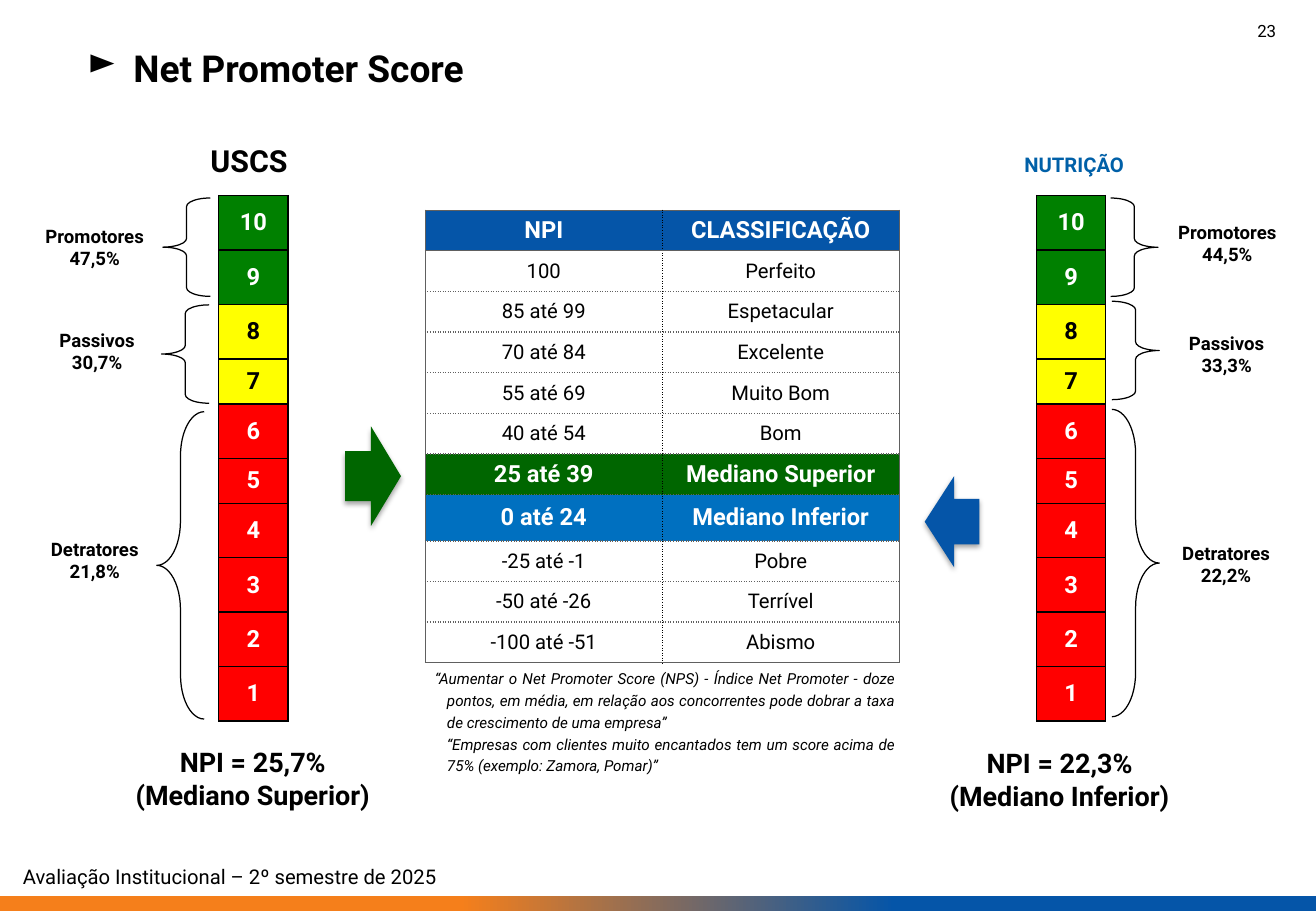
"""Builds the Net Promoter Score slide comparing USCS with the Nutrição course."""
import pptx
import pptx.dml.color
import pptx.enum.dml
import pptx.enum.shapes
import pptx.enum.text
import pptx.oxml
import pptx.oxml.ns
import pptx.util
from pptx.util import Inches

COLORS = {
    "black": "000000", "white": "FFFFFF", "gray": "606060", "orange": "F57F1B",
    "navy": "0555A8", "title_blue": "0060A8", "row_blue": "0070C0",
    "dark_green": "006600", "green": "008000", "yellow": "FFFF00", "red": "FF0000",
}
RGB = {name: pptx.dml.color.RGBColor.from_string(code) for name, code in COLORS.items()}
ALIGN = pptx.enum.text.PP_ALIGN
ANCHOR = pptx.enum.text.MSO_ANCHOR
SHAPE = pptx.enum.shapes.MSO_SHAPE
NAMESPACE = pptx.oxml.ns.nsdecls("a")


def write(frame, lines, size, color="black", bold=True, align=ALIGN.CENTER, italic=False):
    frame.word_wrap = True
    for index, line in enumerate(lines):
        paragraph = frame.paragraphs[0] if index == 0 else frame.add_paragraph()
        paragraph.alignment = align
        run = paragraph.add_run()
        run.text = line
        run.font.name = "Roboto"
        run.font.size = pptx.util.Pt(size)
        run.font.bold = bold
        run.font.italic = italic
        run.font.color.rgb = RGB[color]


def style_cell(cell, text, size, color, bold, fill, borders):
    cell.vertical_anchor = ANCHOR.MIDDLE
    write(cell.text_frame, [text], size, color, bold)
    cell.fill.solid()
    cell.fill.fore_color.rgb = RGB[fill]
    properties = cell._tc.get_or_add_tcPr()
    for index, (side, (line_color, width, dash)) in enumerate(zip("LRTB", borders)):
        properties.insert(index, pptx.oxml.parse_xml(
            f'<a:ln{side} {NAMESPACE} w="{pptx.util.Pt(width)}"><a:solidFill>'
            f'<a:srgbClr val="{COLORS[line_color]}"/></a:solidFill>'
            f'<a:prstDash val="{dash}"/></a:ln{side}>'))


presentation = pptx.Presentation()
presentation.slide_width = Inches(10.83)
presentation.slide_height = Inches(7.5)
slide = presentation.slides.add_slide(presentation.slide_layouts[6])
shapes = slide.shapes

footer_bar = shapes.add_shape(SHAPE.RECTANGLE, 0, Inches(7.38), Inches(10.83), Inches(0.12))
footer_bar.shadow.inherit = False
footer_bar.line.fill.background()
footer_bar.fill.gradient()
footer_bar.fill.gradient_angle = 0
for stop, color, position in zip(footer_bar.fill.gradient_stops, ("orange", "navy"), (0.35, 0.68)):
    stop.color.rgb = RGB[color]
    stop.position = position

labels = [
    ((0.09, 7.07, 10.65, 0.3), ["Avaliação Institucional – 2º semestre de 2025"],
     12, "black", False, ALIGN.LEFT, ANCHOR.TOP),
    ((8.31, 0.12, 2.29, 0.4), ["23"], 10, "black", False, ALIGN.RIGHT, ANCHOR.TOP),
    ((0.28, 0.3, 4.04, 0.51), ["Net Promoter Score"], 22, "black", True, ALIGN.LEFT, ANCHOR.MIDDLE),
    ((0.6, 1.12, 2.9, 0.4), ["USCS"], 18, "black", True, ALIGN.CENTER, ANCHOR.TOP),
    ((7.63, 1.1, 2.42, 0.51), ["NUTRIÇÃO"], 12, "title_blue", True, ALIGN.CENTER, ANCHOR.MIDDLE),
]
for box, lines, size in [
    ((0.18, 1.8, 1.2, 0.49), ["Promotores", "47,5%"], 11),
    ((0.15, 2.66, 1.3, 0.47), ["Passivos", "30,7%"], 11),
    ((0.14, 4.38, 1.28, 0.47), ["Detratores", "21,8%"], 11),
    ((0.79, 6.09, 2.58, 0.64), ["NPI = 25,7%", "(Mediano Superior)"], 16),
    ((9.54, 1.77, 1.12, 0.47), ["Promotores", "44,5%"], 11),
    ((9.45, 2.68, 1.29, 0.47), ["Passivos", "33,3%"], 11),
    ((9.45, 4.41, 1.28, 0.49), ["Detratores", "22,2%"], 11),
    ((7.1, 6.1, 3.24, 0.64), ["NPI = 22,3%", "(Mediano Inferior)"], 16),
]:
    labels.append((box, lines, size, "black", True, ALIGN.CENTER, ANCHOR.TOP))

for box, lines, size, color, bold, align, anchor in labels:
    frame = shapes.add_textbox(*map(Inches, box)).text_frame
    frame.vertical_anchor = anchor
    write(frame, lines, size, color, bold, align)
    if lines == ["Net Promoter Score"]:
        bullet = frame.paragraphs[0]._p.get_or_add_pPr()
        bullet.set("marL", str(Inches(0.72)))
        bullet.set("indent", str(Inches(-0.38)))
        bullet.append(pptx.oxml.parse_xml(
            f'<a:buClr {NAMESPACE}><a:srgbClr val="{COLORS["black"]}"/></a:buClr>'))
        bullet.append(pptx.oxml.parse_xml(f'<a:buChar {NAMESPACE} char="►"/>'))

classification = [
    ("NPI", "CLASSIFICAÇÃO", "navy"),
    ("100", "Perfeito", "white"),
    ("85 até 99", "Espetacular", "white"),
    ("70 até 84", "Excelente", "white"),
    ("55 até 69", "Muito Bom", "white"),
    ("40 até 54", "Bom", "white"),
    ("25 até 39", "Mediano Superior", "dark_green"),
    ("0 até 24", "Mediano Inferior", "row_blue"),
    ("-25 até -1", "Pobre", "white"),
    ("-50 até -26", "Terrível", "white"),
    ("-100 até -51", "Abismo", "white"),
]
table = shapes.add_table(
    len(classification), 2, Inches(3.5), Inches(1.73), Inches(3.9), Inches(3.73)).table
table.first_row = table.horz_banding = False
outer = ("gray", 0.5, "solid")
row_rule = ("gray", 1, "sysDot")
column_rule = ("black", 1, "sysDot")
last_row = len(classification) - 1
for row, (npi, name, fill) in enumerate(classification):
    table.rows[row].height = Inches(0.38) if name == "Mediano Inferior" else Inches((3.73 - 0.38) / 10)
    top = outer if row < 2 else row_rule
    bottom = outer if row in (0, last_row) else row_rule
    highlighted = fill != "white"
    for column, text in enumerate((npi, name)):
        sides = (outer, column_rule) if column == 0 else (column_rule, outer)
        style_cell(table.cell(row, column), text, 14 if highlighted else 12,
                   "white" if highlighted else "black", highlighted, fill, (*sides, top, bottom))

quotes = shapes.add_textbox(Inches(3.48), Inches(5.43), Inches(3.98), Inches(0.99)).text_frame
write(quotes, [
    "“Aumentar o Net Promoter Score (NPS) - Índice Net Promoter - doze pontos, em média, "
    "em relação aos concorrentes pode dobrar a taxa de crescimento de uma empresa”",
    "“Empresas com clientes muito encantados tem um score acima de 75% (exemplo: Zamora, Pomar)”",
], 9, bold=False, align=ALIGN.JUSTIFY, italic=True)
for paragraph, indent in zip(quotes.paragraphs, (-0.1, 0)):
    paragraph.line_spacing = 1.2
    paragraph._p.get_or_add_pPr().set("marL", str(Inches(0.1)))
    paragraph._p.get_or_add_pPr().set("indent", str(Inches(indent)))

for left in (1.8, 8.53):
    scores = shapes.add_table(10, 1, Inches(left), Inches(1.61), Inches(0.57), Inches(4.33)).table
    scores.first_row = scores.horz_banding = False
    for row, score in enumerate(range(10, 0, -1)):
        scores.rows[row].height = Inches(0.37 if score in (7, 5) else (4.33 - 2 * 0.37) / 8)
        fill = "green" if score > 8 else "yellow" if score > 6 else "red"
        style_cell(scores.cell(row, 0), str(score), 14, "black" if fill == "yellow" else "white",
                   True, fill, [("black", 1, "solid")] * 4)

for left, top, height, curve, rotation in [
    (1.34, 1.63, 0.81, 0.183, 0), (1.33, 2.51, 0.81, 0.183, 0), (1.29, 3.39, 2.53, 0.932, 0),
    (9.14, 1.63, 0.81, 0.183, 180), (9.15, 2.48, 0.81, 0.183, 180), (9.15, 3.37, 2.53, 0.932, 180),
]:
    brace = shapes.add_shape(SHAPE.LEFT_BRACE, Inches(left), Inches(top), Inches(0.39), Inches(height))
    brace.shadow.inherit = False
    brace.rotation = rotation
    brace.adjustments[0] = curve
    brace.fill.background()
    brace.line.color.rgb = RGB["black"]
    brace.line.width = pptx.util.Pt(0.75)

for box, color, rotation in [
    ((2.84, 3.51, 0.46, 0.82), "dark_green", 180),
    ((7.61, 3.92, 0.45, 0.75), "navy", 0),
]:
    arrow = shapes.add_shape(SHAPE.LEFT_ARROW, *map(Inches, box))
    arrow.rotation = rotation
    arrow.adjustments[1] = 0.538
    arrow.fill.solid()
    arrow.fill.fore_color.rgb = RGB[color]
    arrow.line.fill.background()
    arrow._element.spPr.append(pptx.oxml.parse_xml(
        f'<a:effectLst {NAMESPACE}><a:outerShdw blurRad="{pptx.util.Pt(3.1)}" '
        f'dist="{pptx.util.Pt(1.8)}" dir="5400000" rotWithShape="0">'
        f'<a:srgbClr val="{COLORS["black"]}"><a:alpha val="35000"/></a:srgbClr>'
        '</a:outerShdw></a:effectLst>'))

presentation.save("out.pptx")
